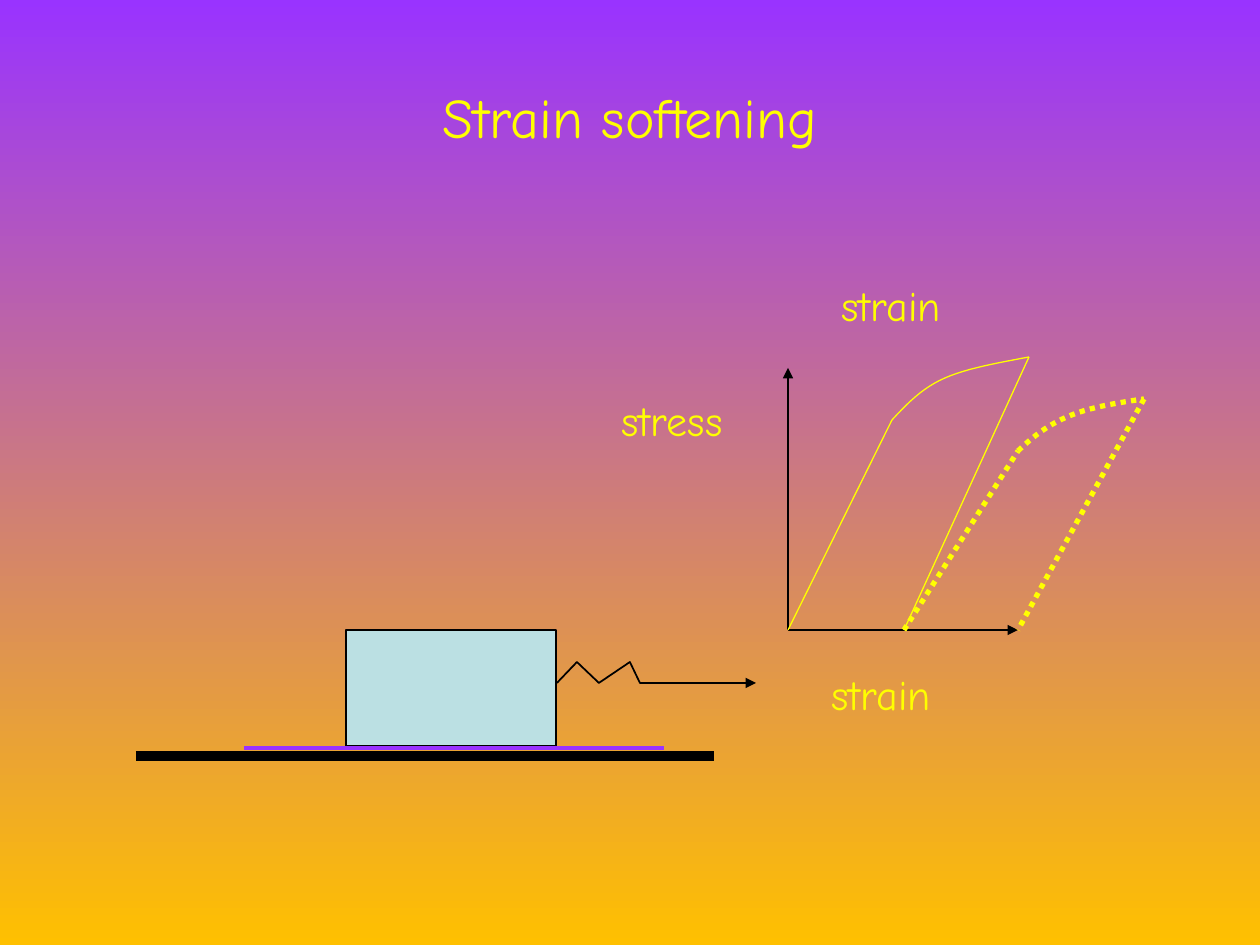
from lxml.etree import SubElement as Sub
from pptx import Presentation
from pptx.dml.color import RGBColor as RGB
from pptx.enum.dml import MSO_LINE_DASH_STYLE as Dash
from pptx.enum.shapes import MSO_CONNECTOR as Conn, MSO_SHAPE as Kind
from pptx.enum.text import MSO_ANCHOR as Anchor, PP_ALIGN as Align
from pptx.oxml.ns import qn
from pptx.util import Pt

HUES = {"top": "9933FF", "base": "FFC000", "text": "FFFF00",
        "ink": "000000", "block": "BBE0E3"}
FONT = "Comic Neue"
SCALE = 914400 / 126


def emu(*vals):
    return [round(val * SCALE) for val in vals]


def hue(name):
    return RGB.from_string(HUES[name])


class Deck:
    """Holds the style and the current slide, and draws each kind of element."""

    def __init__(self):
        self.file = Presentation()
        self.file.slide_width, self.file.slide_height = emu(1260, 945)
        self.slide = self.file.slides.add_slide(self.file.slide_layouts[5])
        self.shapes = self.slide.shapes

    def back(self, *names):
        fill = self.slide.background.fill
        fill.gradient()
        fill.gradient_angle = 270
        for stop, name in zip(fill.gradient_stops, names):
            stop.color.rgb = hue(name)

    def words(self, frame, text, size, align):
        frame.text = text
        para = frame.paragraphs[0]
        para.alignment = align
        font = para.runs[0].font
        font.name, font.size = FONT, Pt(size)
        font.color.rgb = hue("text")

    def title(self, text, *box):
        shape = self.shapes.title
        shape.left, shape.top, shape.width, shape.height = emu(*box)
        shape.text_frame.vertical_anchor = Anchor.MIDDLE
        self.words(shape.text_frame, text, 32, Align.CENTER)

    def label(self, text, *box, wrap=True):
        frame = self.shapes.add_textbox(*emu(*box)).text_frame
        frame.word_wrap = wrap
        self.words(frame, text, 24, Align.LEFT)

    def stroke(self, shape, name, width, dash=None, arrow=False):
        line = shape.line
        line.color.rgb = hue(name)
        line.width = Pt(width)
        if dash:
            line.dash_style = dash
        if arrow:
            edge = shape._element.spPr.find(qn("a:ln"))
            Sub(edge, qn("a:tailEnd"), type="triangle")

    def line(self, start, end, name, width=0.75, **look):
        shape = self.shapes.add_connector(Conn.STRAIGHT, *emu(*start, *end))
        self.stroke(shape, name, width, **look)
        Sub(shape._element.spPr, qn("a:effectLst"))

    def trace(self, spots, name, width=0.75, **look):
        spots = [emu(*spot) for spot in spots]
        form = self.shapes.build_freeform(*spots[0])
        form.add_line_segments(spots[1:], close=False)
        shape = form.convert_to_shape()
        shape.fill.background()
        shape.shadow.inherit = False
        self.stroke(shape, name, width, **look)

    def curve(self, start, *parts, steps=12, **look):
        spots = [start]
        for part in parts:
            ends = (spots[-1], *part)
            for step in range(1, steps + 1):
                t = step / steps
                rates = ((1 - t) ** 3, 3 * t * (1 - t) ** 2,
                         3 * t * t * (1 - t), t ** 3)
                spots.append([sum(r * v for r, v in zip(rates, axis))
                              for axis in zip(*ends)])
        self.trace(spots, "text", **look)

    def block(self, *box):
        shape = self.shapes.add_shape(Kind.RECTANGLE, *emu(*box))
        shape.fill.solid()
        shape.fill.fore_color.rgb = hue("block")
        shape.shadow.inherit = False
        self.stroke(shape, "ink", 0.75)


def main():
    deck = Deck()
    deck.back("top", "base")
    deck.title("Strain softening", 63, 38, 1134, 157)
    deck.line((136, 756), (714, 756), "ink", 6)

    zero, rest, peak = (788, 630), (904, 630), (1029, 357)
    for tip in ((788, 368), (1018, 630)):
        deck.line(zero, tip, "ink", arrow=True)
    deck.line(zero, (892, 420), "text")
    deck.curve((892, 420), ((907, 404), (922, 388), (945, 378)),
               ((968, 368), (998, 363), peak))
    deck.line(peak, rest, "text")

    deck.label("stress", 609, 388, 168, 63)
    deck.label("strain", 819, 662, 168, 63)
    deck.label("strain", 829, 273, 141, 63, wrap=False)

    dots = {"width": 3, "dash": Dash.ROUND_DOT}
    knee, crest = (1018, 451), (1144, 399)
    deck.line(rest, knee, "text", **dots)
    deck.curve(knee, ((1032, 438), (1046, 426), (1067, 417)),
               ((1087, 408), (1116, 403), crest), **dots)
    deck.line(crest, (1018, 630), "text", **dots)

    deck.block(346, 630, 210, 116)
    deck.trace([(557, 683), (577, 662), (599, 683), (630, 662),
                (640, 683), (756, 683)], "ink", 1, arrow=True)
    deck.line((244, 748), (664, 748), "top", 2.25)
    deck.file.save("out.pptx")


if __name__ == "__main__":
    main()
